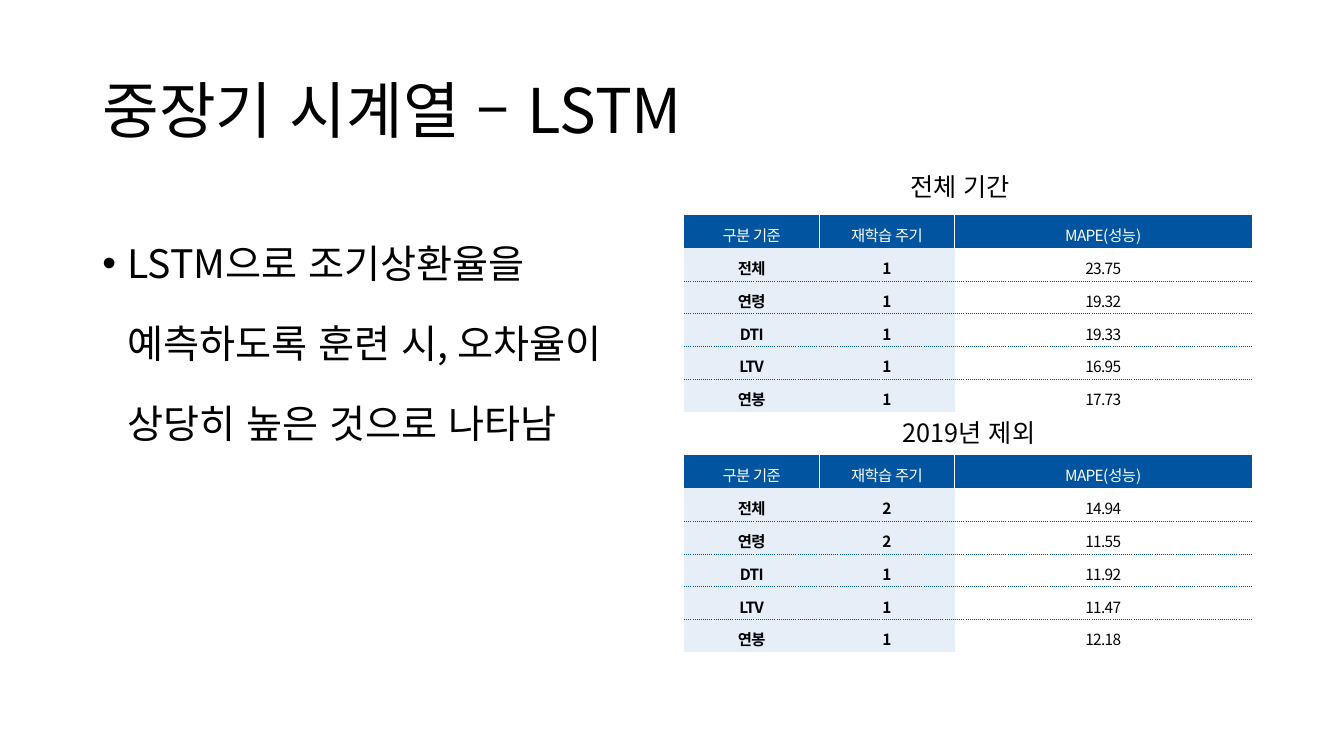
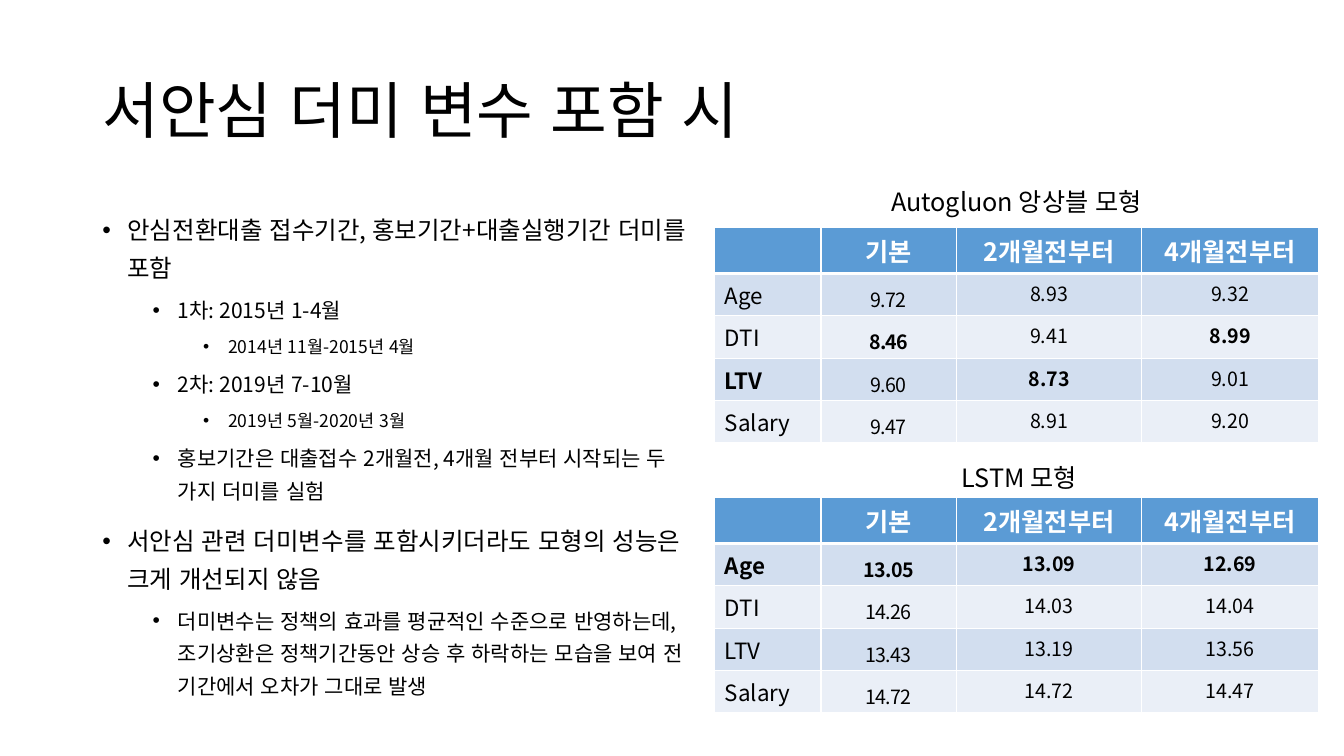
from dataclasses import dataclass

from pptx import Presentation
from pptx.dml.color import RGBColor
from pptx.enum.lang import MSO_LANGUAGE_ID
from pptx.enum.text import MSO_ANCHOR, MSO_AUTO_SIZE, PP_ALIGN
from pptx.oxml.ns import qn
from pptx.util import Inches, Pt
from lxml.etree import SubElement

COLS, ROWS = 160, 90
UNIT = Inches(7.5) / ROWS
FONT = "Noto Sans CJK KR"
BLACK, WHITE = "000000", "FFFFFF"
NAVY, NAVY_LINE, PALE = "0054A0", "0054A1", "E6EEF7"
BLUE, BAND_DARK, BAND_LIGHT = "5B9BD5", "D2DEEF", "EAEFF7"


@dataclass(frozen=True)
class Box:
    """Place and size in grid cells."""
    x: float
    y: float
    w: float
    h: float

    def emu(self) -> list[int]:
        return [round(v * UNIT) for v in (self.x, self.y, self.w, self.h)]


@dataclass(frozen=True)
class TextStyle:
    size: float
    color: str = BLACK
    bold: bool = False
    align: PP_ALIGN = PP_ALIGN.LEFT
    line: float = 1.0
    before: float = 0
    spacing: int = 0
    compact: bool = False


@dataclass(frozen=True)
class Border:
    width: float
    color: str
    dash: str = "solid"


@dataclass(frozen=True)
class Result:
    """A captioned table of results; best names the row with a bold label."""
    caption: str
    caption_box: Box
    x: float
    y: float
    rows: list[list[str]]
    best: str = ""


@dataclass(frozen=True)
class TableGrid:
    """Header texts, column widths and row heights in grid cells."""
    header: list[str]
    widths: list[float]
    header_height: float
    row_height: float


@dataclass(frozen=True)
class Bullet:
    text: str
    level: int = 0


TITLE_BOX = Box(11, 4.8, 138, 17.4)
TITLE = TextStyle(44, line=0.9)
CAPTION = TextStyle(18)
CENTER = PP_ALIGN.CENTER

PERIOD_GRID = TableGrid(["구분 기준", "재학습 주기", "MAPE(성능)"],
                        [16.1, 16.1, 35.4], 3.91, 3.91)
PERIOD_RESULTS = [
    Result("전체 기간", Box(107.2, 19.85, 17, 4.8), 81.45, 25.6, [
        ["전체", "1", "23.75"],
        ["연령", "1", "19.32"],
        ["DTI", "1", "19.33"],
        ["LTV", "1", "16.95"],
        ["연봉", "1", "17.73"]]),
    Result("2019년 제외", Box(106.3, 49.1, 19.9, 4.8), 81.45, 54.2, [
        ["전체", "2", "14.94"],
        ["연령", "2", "11.55"],
        ["DTI", "1", "11.92"],
        ["LTV", "1", "11.47"],
        ["연봉", "1", "12.18"]]),
]
DUMMY_GRID = TableGrid(["", "기본", "2개월전부터", "4개월전부터"],
                       [12.65, 16.1, 22.1, 21], 5.5, 5.05)
DUMMY_RESULTS = [
    Result("Autogluon 앙상블 모형", Box(104.9, 21.55, 35.4, 4.8), 85.1, 27.05, [
        ["Age", "9.72", "8.93", "9.32"],
        ["DTI", "8.46", "9.41", "8.99"],
        ["LTV", "9.60", "8.73", "9.01"],
        ["Salary", "9.47", "8.91", "9.20"]], "LTV"),
    Result("LSTM 모형", Box(113.3, 54.4, 21.2, 4.8), 85.1, 59.2, [
        ["Age", "13.05", "13.09", "12.69"],
        ["DTI", "14.26", "14.03", "14.04"],
        ["LTV", "13.43", "13.19", "13.56"],
        ["Salary", "14.72", "14.72", "14.47"]], "Age"),
]
LSTM_BULLETS = [
    Bullet("LSTM으로 조기상환율을 예측하도록 훈련 시, 오차율이 상당히 높은 것으로 나타남"),
]
DUMMY_BULLETS = [
    Bullet("안심전환대출 접수기간, 홍보기간+대출실행기간 더미를 포함"),
    Bullet("1차: 2015년 1-4월", 1),
    Bullet("2014년 11월-2015년 4월", 2),
    Bullet("2차: 2019년 7-10월", 1),
    Bullet("2019년 5월-2020년 3월", 2),
    Bullet("홍보기간은 대출접수 2개월전, 4개월 전부터 시작되는 두 가지 더미를 실험", 1),
    Bullet("서안심 관련 더미변수를 포함시키더라도 모형의 성능은 크게 개선되지 않음"),
    Bullet("더미변수는 정책의 효과를 평균적인 수준으로 반영하는데, 조기상환은 "
           "정책기간동안 상승 후 하락하는 모습을 보여 전 기간에서 오차가 그대로 발생", 1),
]
LSTM_LEVELS = [TextStyle(28, line=1.7, before=10)]
DUMMY_LEVELS = [TextStyle(17.5, line=1.3, before=10),
                TextStyle(15, line=1.3, before=5),
                TextStyle(12.5, line=1.3, before=5)]


def rgb(color: str) -> RGBColor:
    return RGBColor.from_string(color)


def write(p, text: str, style: TextStyle) -> None:
    paragraph_format = {"alignment": style.align, "line_spacing": style.line,
                        "space_before": Pt(style.before)}
    for name, value in paragraph_format.items():
        setattr(p, name, value)
    r = p.add_run()
    r.text = text
    run_format = {"name": FONT, "size": Pt(style.size), "bold": style.bold,
                  "language_id": MSO_LANGUAGE_ID.KOREAN}
    for name, value in run_format.items():
        setattr(r.font, name, value)
    r.font.color.rgb = rgb(style.color)
    props = r.font._element
    SubElement(props, qn("a:ea"), typeface=FONT)
    if style.spacing:
        props.set("spc", str(style.spacing))


def add_titled_slide(prs, title: str):
    s = prs.slides.add_slide(prs.slide_layouts[5])
    sp = s.shapes.title
    sp.left, sp.top, sp.width, sp.height = TITLE_BOX.emu()
    tf = sp.text_frame
    tf.auto_size = MSO_AUTO_SIZE.NONE
    tf.vertical_anchor = MSO_ANCHOR.MIDDLE
    write(tf.paragraphs[0], title, TITLE)
    return s


def add_text_frame(s, box: Box):
    tf = s.shapes.add_textbox(*box.emu()).text_frame
    tf.word_wrap = True
    return tf


def add_bullets(s, box: Box, bullets: list[Bullet], levels: list[TextStyle]) -> None:
    tf = add_text_frame(s, box)
    for i, bullet in enumerate(bullets):
        p = tf.add_paragraph() if i else tf.paragraphs[0]
        write(p, bullet.text, levels[bullet.level])
        p.level = bullet.level
        props = p._p.get_or_add_pPr()
        props.set("marL", str(Inches(0.25 + 0.5 * bullet.level)))
        props.set("indent", str(-Inches(0.25)))
        SubElement(props, qn("a:buFont"), typeface="Arial")
        SubElement(props, qn("a:buChar"), char="•")


def format_cell(cell, text: str, style: TextStyle, fill: str | None,
                borders: dict[str, Border]) -> None:
    """Borders are keyed by side (L, R, T, B); a side left out has no line."""
    props = cell._tc.get_or_add_tcPr()
    for side in "LRTB":
        border = borders.get(side)
        line = SubElement(props, qn(f"a:ln{side}"))
        if border is None:
            SubElement(line, qn("a:noFill"))
            continue
        line.set("w", str(Pt(border.width)))
        solid = SubElement(line, qn("a:solidFill"))
        SubElement(solid, qn("a:srgbClr"), val=border.color)
        SubElement(line, qn("a:prstDash"), val=border.dash)
    if fill:
        cell.fill.solid()
        cell.fill.fore_color.rgb = rgb(fill)
    else:
        cell.fill.background()
    if style.compact:
        cell.vertical_anchor = MSO_ANCHOR.MIDDLE
        cell.margin_left = cell.margin_right = Inches(0.07)
        cell.margin_top = cell.margin_bottom = Inches(0.02)
    if text:
        write(cell.text_frame.paragraphs[0], text, style)


def add_result(s, result: Result, grid: TableGrid, cell_format) -> None:
    write(add_text_frame(s, result.caption_box).paragraphs[0], result.caption, CAPTION)
    rows = [grid.header, *result.rows]
    heights = [grid.header_height] + [grid.row_height] * len(result.rows)
    box = Box(result.x, result.y, sum(grid.widths), sum(heights))
    table = s.shapes.add_table(len(rows), len(grid.header), *box.emu()).table
    for column, width in zip(table.columns, grid.widths):
        column.width = round(width * UNIT)
    for i, (row, height) in enumerate(zip(rows, heights)):
        table.rows[i].height = round(height * UNIT)
        for j, text in enumerate(row):
            format_cell(table.cell(i, j), text, *cell_format(result, i, j))


def period_format(result: Result, i: int, j: int):
    """Navy header, pale bold key columns, dotted rules between rows."""
    white, dotted = Border(0.28, WHITE), Border(0.28, NAVY_LINE, "sysDot")
    header, key = i == 0, j < 2
    style = TextStyle(11, WHITE if header else BLACK, key and not header, CENTER,
                      line=1.3, spacing=-50, compact=True)
    borders = {}
    if header:
        if j > 0:
            borders["L"] = white
        if key:
            borders["R"] = white
        return style, NAVY, borders
    if i > 1:
        borders["T"] = dotted
    if i < len(result.rows):
        borders["B"] = dotted
    return style, PALE if key else None, borders


def dummy_format(result: Result, i: int, j: int):
    """Blue header and banded rows; the lowest value of each column is bold."""
    thin, thick = Border(1, WHITE), Border(3, WHITE)
    borders = {side: thin for side in "LRTB"}
    if i == 0:
        return TextStyle(18, WHITE, True, CENTER), BLUE, borders | {"B": thick}
    if i == 1:
        borders["T"] = thick
    row = result.rows[i - 1]
    fill = BAND_DARK if i % 2 else BAND_LIGHT
    if j == 0:
        return TextStyle(16, bold=row[0] == result.best), fill, borders
    bold = float(row[j]) == min(float(r[j]) for r in result.rows)
    if j == 1:
        style = TextStyle(14, BLACK, bold, CENTER, line=1.3, spacing=-50, compact=True)
    else:
        style = TextStyle(14, BLACK, bold, CENTER)
    return style, fill, borders


def main() -> None:
    prs = Presentation()
    prs.slide_width, prs.slide_height = round(COLS * UNIT), round(ROWS * UNIT)

    s = add_titled_slide(prs, "중장기 시계열 – LSTM")
    add_bullets(s, Box(11, 24, 69, 57), LSTM_BULLETS, LSTM_LEVELS)
    for result in PERIOD_RESULTS:
        add_result(s, result, PERIOD_GRID, period_format)

    s = add_titled_slide(prs, "서안심 더미 변수 포함 시")
    add_bullets(s, Box(11, 24, 72.5, 66), DUMMY_BULLETS, DUMMY_LEVELS)
    for result in DUMMY_RESULTS:
        add_result(s, result, DUMMY_GRID, dummy_format)

    prs.save("out.pptx")


if __name__ == "__main__":
    main()
